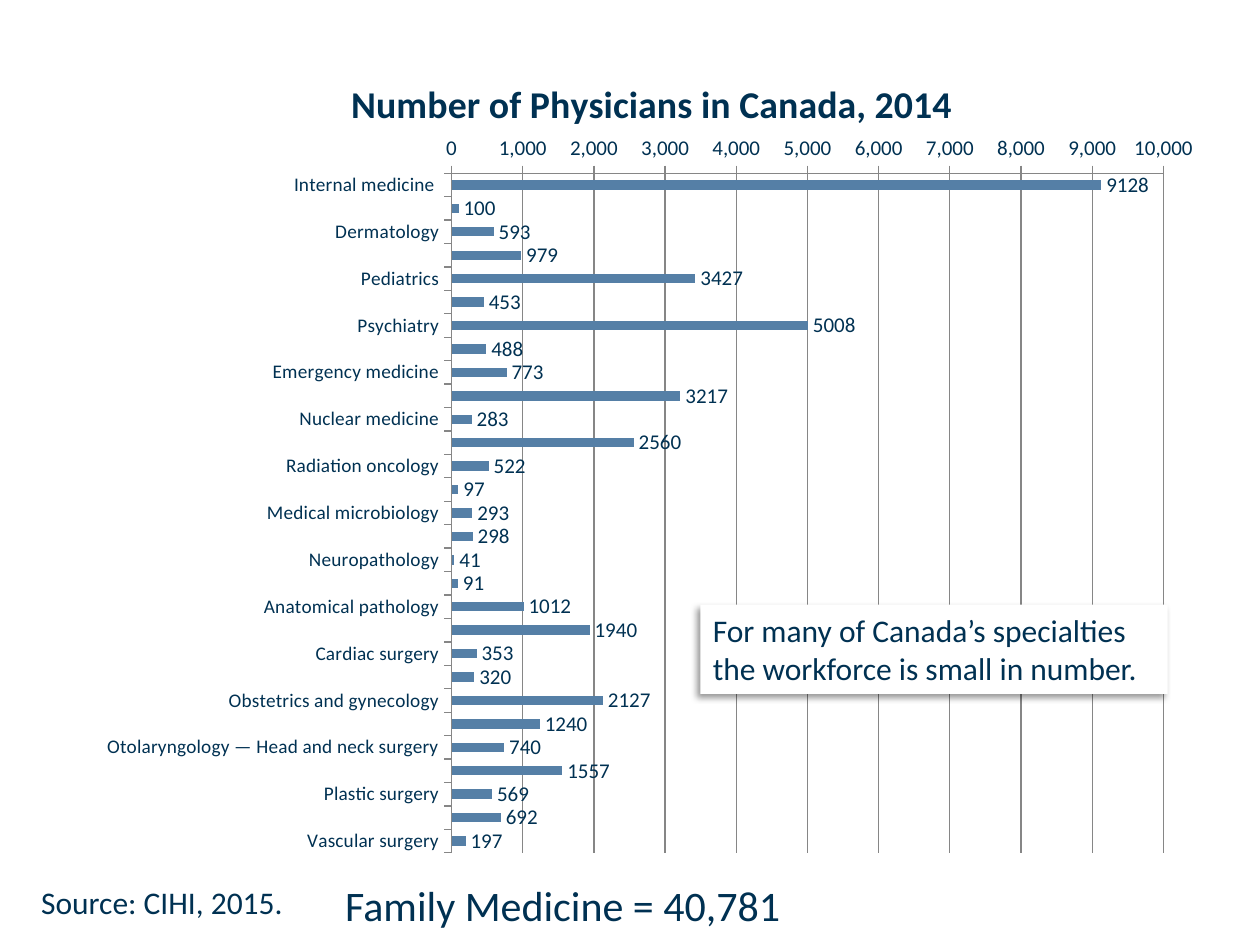
from lxml import etree
from pptx import Presentation
from pptx import util as u
from pptx.chart.data import CategoryChartData
from pptx.dml.color import RGBColor
from pptx.enum import chart as ch, shapes, text
from pptx.oxml import parse_xml
from pptx.oxml.ns import nsdecls, qn

THEME = {
    "font": "Calibri",
    "ink": RGBColor.from_string("003152"),
    "bar": RGBColor.from_string("557FA6"),
    "line": RGBColor.from_string("868686"),
    "paper": RGBColor.from_string("FFFFFF"),
    "title": 21.6, "category": 11, "value": 12, "body": 18, "total": 24,
}

TITLE = "Number of Physicians in Canada, 2014"
PHYSICIANS = [
    ("Internal medicine ", 9128),
    ("Medical genetics", 100),
    ("Dermatology", 593),
    ("Neurology", 979),
    ("Pediatrics", 3427),
    ("Physical medicine and rehabilitation", 453),
    ("Psychiatry", 5008),
    ("Public health and preventive medicine", 488),
    ("Emergency medicine", 773),
    ("Anesthesiology", 3217),
    ("Nuclear medicine", 283),
    ("Diagnostic radiology", 2560),
    ("Radiation oncology", 522),
    ("Medical biochemistry", 97),
    ("Medical microbiology", 293),
    ("General pathology", 298),
    ("Neuropathology", 41),
    ("Hematological pathology", 91),
    ("Anatomical pathology", 1012),
    ("General surgery", 1940),
    ("Cardiac surgery", 353),
    ("Neurosurgery", 320),
    ("Obstetrics and gynecology", 2127),
    ("Ophthalmology", 1240),
    ("Otolaryngology — Head and neck surgery", 740),
    ("Orthopedic surgery", 1557),
    ("Plastic surgery", 569),
    ("Urology", 692),
    ("Vascular surgery", 197),
]

# Text, type size, (left, top, width, height) in cm
CHART_AREA = (1.7, 0.74, 22.78, 16.79)
TOTAL = ("Family Medicine = 40,781", "total", (6.71, 17.6, 9.37, 1.27))
CALLOUT = ("For many of Canada’s specialties the workforce is small in number.",
           "body", (14.12, 12.19, 9.42, 1.8))
SOURCE = ("Source: CIHI, 2015.", "body", (0.58, 17.68, 5.44, 1.02))


def apply(target, values):
    for name, value in values.items():
        setattr(target, name, value)


def style(font, size, bold=False):
    apply(font, {"name": THEME["font"], "size": u.Pt(THEME[size]), "bold": bold})
    font.color.rgb = THEME["ink"]


def place(area):
    return [u.Cm(length) for length in area]


def layout(fractions, inner=False):
    """Manual chart layout; fractions of the chart area keyed x, y, w, h."""
    target = '<c:layoutTarget val="inner"/>' if inner else ""
    modes = '<c:xMode val="edge"/><c:yMode val="edge"/>'
    sizes = "".join(f'<c:{key} val="{value}"/>' for key, value in fractions.items())
    return parse_xml(f'<c:layout {nsdecls("c")}><c:manualLayout>'
                     f"{target}{modes}{sizes}</c:manualLayout></c:layout>")


def drop_layout(element):
    for old in element.findall(qn("c:layout")):
        element.remove(old)


def write(box, words, size, wrap):
    frame = box.text_frame
    apply(frame, {"word_wrap": wrap, "auto_size": text.MSO_AUTO_SIZE.SHAPE_TO_FIT_TEXT})
    para = frame.paragraphs[0]
    para.alignment = text.PP_ALIGN.LEFT
    span = para.add_run()
    span.text = words
    style(span.font, size)


def add_label(page, words, size, area):
    write(page.shapes.add_textbox(*place(area)), words, size, wrap=False)


def add_callout(page, words, size, area):
    box = page.shapes.add_shape(shapes.MSO_SHAPE.RECTANGLE, *place(area))
    box.shadow.inherit = False
    box.fill.solid()
    box.fill.fore_color.rgb = THEME["paper"]
    box.line.fill.background()
    effects = box._element.spPr.find(qn("a:effectLst"))
    shadow = etree.SubElement(effects, qn("a:outerShdw"), blurRad=str(u.Pt(4)),
                              dist=str(u.Pt(3)), dir=str(135 * 60000),
                              algn="tr", rotWithShape="0")
    color = etree.SubElement(shadow, qn("a:srgbClr"), val="000000")
    etree.SubElement(color, qn("a:alpha"), val="40000")
    write(box, words, size, wrap=True)


def add_physician_chart(page):
    data = CategoryChartData()
    data.categories = [name for name, _ in PHYSICIANS]
    data.add_series("Series 1", [count for _, count in PHYSICIANS])
    chart = page.shapes.add_chart(ch.XL_CHART_TYPE.BAR_CLUSTERED,
                                  *place(CHART_AREA), data).chart
    style(chart.font, "body")
    chart.has_legend = False

    frame = chart.chart_title.text_frame
    frame.text = TITLE
    style(frame.paragraphs[0].runs[0].font, "title", bold=True)
    title = chart.chart_title._element
    drop_layout(title)
    title.find(qn("c:tx")).addnext(layout({"x": 0.23, "y": 0.04}))

    plot_area = chart._chartSpace.chart.plotArea
    drop_layout(plot_area)
    plot_area.insert(0, layout({"x": 0.325, "y": 0.164, "w": 0.63, "h": 0.816}, inner=True))

    names, counts = chart.category_axis, chart.value_axis
    names.reverse_order = True
    apply(counts, {"minimum_scale": 0, "maximum_scale": 10000, "major_unit": 1000,
                   "has_major_gridlines": True})
    for axis, size in ((names, "category"), (counts, "value")):
        axis.major_tick_mark = ch.XL_TICK_MARK.OUTSIDE
        axis.format.line.color.rgb = THEME["line"]
        style(axis.tick_labels.font, size)
    apply(counts.tick_labels, {"number_format": "#,##0", "number_format_is_linked": False})
    counts.major_gridlines.format.line.color.rgb = THEME["line"]

    plot = chart.plots[0]
    apply(plot, {"gap_width": 150, "vary_by_categories": False, "has_data_labels": True})
    apply(plot.data_labels, {"show_value": True,
                             "position": ch.XL_LABEL_POSITION.OUTSIDE_END})
    style(plot.data_labels.font, "value")
    fill = plot.series[0].format.fill
    fill.solid()
    fill.fore_color.rgb = THEME["bar"]


def main():
    deck = Presentation()
    apply(deck, {"slide_width": u.Cm(25.4), "slide_height": u.Cm(19.05)})
    page = deck.slides.add_slide(deck.slide_layouts[6])
    add_physician_chart(page)
    add_label(page, *TOTAL)
    add_callout(page, *CALLOUT)
    add_label(page, *SOURCE)
    deck.save("out.pptx")


if __name__ == "__main__":
    main()
